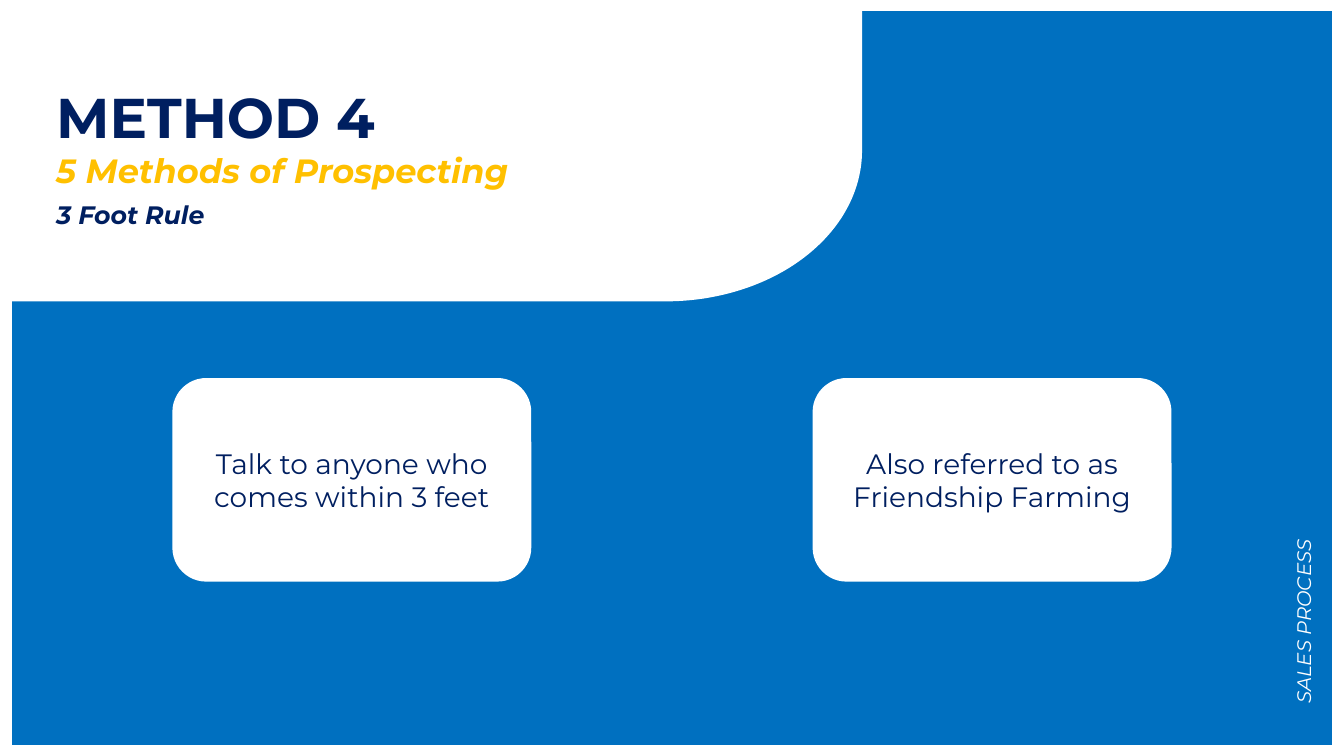
import math

from pptx import Presentation, util as u
from pptx.dml.color import RGBColor
from pptx.enum import shapes, text

BLUE = RGBColor(0x00, 0x70, 0xC0)
NAVY = RGBColor(0x00, 0x1F, 0x60)
GOLD = RGBColor(0xFF, 0xC0, 0x00)
WHITE = RGBColor(0xFF, 0xFF, 0xFF)
FONT = "Montserrat"
WIDTH, HEIGHT = 13.33, 7.5
MARGIN = 0.12


def inches(*values):
    return [u.Inches(v) for v in values]


def paint(sp, color):
    sp.shadow.inherit = False
    sp.fill.solid()
    sp.fill.fore_color.rgb = color
    sp.line.fill.background()


def write(p, words, size, color, bold=False, italic=False):
    p.text = words
    f = p.font
    f.name, f.size, f.bold, f.italic = FONT, u.Pt(size), bold, italic
    f.color.rgb = color


def add_text(s, box, *lines):
    """Put one paragraph per (words, size, color, bold, italic) line."""
    sp = s.shapes.add_textbox(*inches(*box))
    tf = sp.text_frame
    tf.word_wrap = True
    tf.auto_size = text.MSO_AUTO_SIZE.SHAPE_TO_FIT_TEXT
    for i, line in enumerate(lines):
        write(tf.add_paragraph() if i else tf.paragraphs[0], *line)
    return sp


def add_background(s, box):
    paint(s.shapes.add_shape(shapes.MSO_SHAPE.RECTANGLE, *inches(*box)), BLUE)


def add_header_panel(s, box, steps=48):
    """White panel whose lower right corner is a quarter ellipse."""
    x, y, w, h = box
    rx, ry = 1.95, h / 2
    angles = [math.pi / 2 * i / steps for i in range(steps + 1)]
    curve = [(x + w - rx + rx * math.cos(a), y + h - ry + ry * math.sin(a))
             for a in angles]
    outline = [(x + w, y), *curve, (x, y + h)]
    fb = s.shapes.build_freeform(*inches(x, y), scale=1.0)
    fb.add_line_segments([inches(*point) for point in outline])
    paint(fb.convert_to_shape(), WHITE)


def add_header(s, box):
    x, y, w, h = box
    add_header_panel(s, box)
    left = x + 0.46
    add_text(s, (left, y + 0.77, 5.93, 1.18),
             ("METHOD 4", 40, NAVY, True),
             ("5 Methods of Prospecting", 24, GOLD, True, True))
    add_text(s, (left, y + 1.93, 4.82, 0.4),
             ("3 Foot Rule", 18, NAVY, True, True))


def add_cards(s, box, captions):
    """Spread equal cards from the left to the right edge of the box."""
    x, y, w, h = box
    card = 3.56
    step = (w - card) / (len(captions) - 1)
    for i, caption in enumerate(captions):
        sp = s.shapes.add_shape(shapes.MSO_SHAPE.ROUNDED_RECTANGLE,
                                *inches(x + i * step, y, card, h))
        paint(sp, WHITE)
        tf = sp.text_frame
        tf.word_wrap = True
        tf.vertical_anchor = text.MSO_ANCHOR.MIDDLE
        p = tf.paragraphs[0]
        p.alignment = text.PP_ALIGN.CENTER
        write(p, caption, 20, NAVY)


def add_side_label(s, box):
    sp = add_text(s, box, ("SALES PROCESS", 14, WHITE, False, True))
    sp.rotation = 270


def main():
    prs = Presentation()
    prs.slide_width, prs.slide_height = inches(WIDTH, HEIGHT)
    s = prs.slides.add_slide(prs.slide_layouts[6])
    add_background(s, (MARGIN, 0.11, WIDTH - 2 * MARGIN, 7.28))
    add_header(s, (0, 0, 8.55, 2.99))
    add_cards(s, (1.71, HEIGHT / 2, 9.91, 2.02),
              ["Talk to anyone who comes within 3 feet",
               "Also referred to as Friendship Farming"])
    add_side_label(s, (11.78, 5.76, 2.3, 0.34))
    prs.save("out.pptx")


if __name__ == "__main__":
    main()
